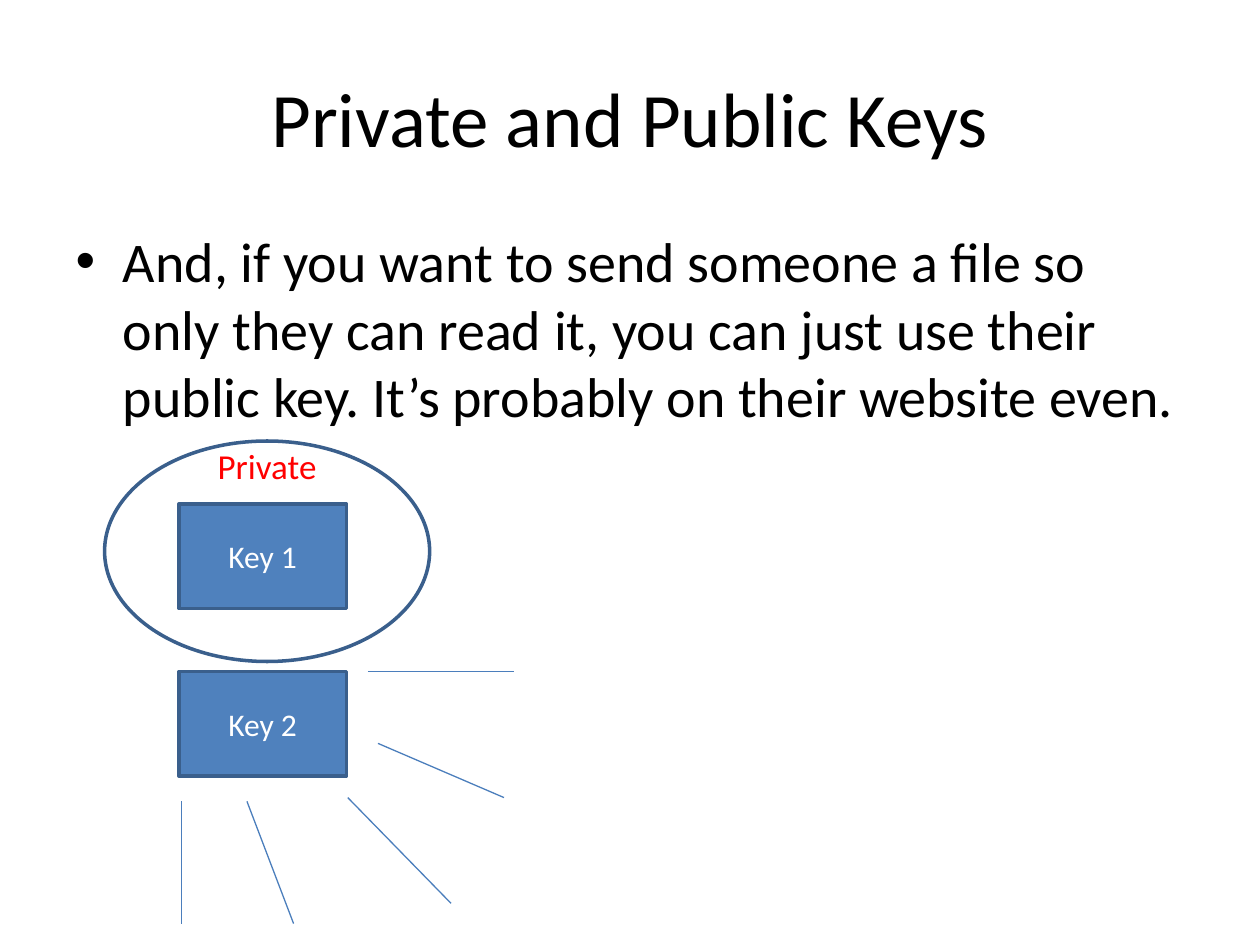
from dataclasses import dataclass

from pptx import Presentation
from pptx.dml.color import RGBColor
from pptx.enum.shapes import MSO_CONNECTOR, MSO_SHAPE
from pptx.enum.text import MSO_ANCHOR, PP_ALIGN
from pptx.oxml.ns import qn
from pptx.util import Inches, Pt

RECTANGLE = MSO_SHAPE.RECTANGLE
OVAL = MSO_SHAPE.OVAL
STRAIGHT = MSO_CONNECTOR.STRAIGHT
MIDDLE = MSO_ANCHOR.MIDDLE
TOP = MSO_ANCHOR.TOP
CENTER = PP_ALIGN.CENTER
LEFT = PP_ALIGN.LEFT

FONT = "Calibri"
BLACK = "000000"
WHITE = "FFFFFF"
RED = "FF0000"
KEY_FILL = "4F81BD"
OUTLINE = "3A5F8C"
RAY_COLOR = "4B7EBC"


@dataclass
class Box:
    left: float
    top: float
    width: float
    height: float

    def lengths(self):
        return [Inches(n) for n in (self.left, self.top, self.width, self.height)]


@dataclass
class Key:
    label: str
    top: float


@dataclass
class Ray:
    start: tuple[float, float]
    end: tuple[float, float]


KEYS = [Key("Key 1", 4), Key("Key 2", 5.33)]
RAYS = [
    Ray((2.92, 5.33), (4.08, 5.33)),
    Ray((2.76, 6.33), (3.58, 7.17)),
    Ray((1.44, 6.36), (1.44, 7.33)),
    Ray((3, 5.9), (4, 6.33)),
    Ray((1.96, 6.36), (2.33, 7.33)),
]


def color(value: str) -> RGBColor:
    return RGBColor.from_string(value)


def write_text(shape, text: str, size: float, font_color: str,
               alignment=CENTER, anchor=MIDDLE):
    frame = shape.text_frame
    frame.text = text
    frame.word_wrap = True
    frame.vertical_anchor = anchor
    paragraph = frame.paragraphs[0]
    paragraph.alignment = alignment
    for run in paragraph.runs:
        run.font.name = FONT
        run.font.size = Pt(size)
        run.font.color.rgb = color(font_color)


def fill_placeholder(shape, box: Box, text: str, size: float, **layout):
    shape.left, shape.top, shape.width, shape.height = box.lengths()
    write_text(shape, text, size, BLACK, **layout)


def add_outlined_shape(slide, kind, box: Box):
    shape = slide.shapes.add_shape(kind, *box.lengths())
    shape.shadow.inherit = False
    shape.fill.background()
    shape.line.color.rgb = color(OUTLINE)
    shape.line.width = Pt(2)
    return shape


def add_key(slide, key: Key):
    shape = add_outlined_shape(slide, RECTANGLE, Box(1.42, key.top, 1.33, 0.83))
    shape.fill.solid()
    shape.fill.fore_color.rgb = color(KEY_FILL)
    write_text(shape, key.label, 18, WHITE)


def add_private_ring(slide):
    ring = Box(0.83, 3.5, 2.58, 1.75)
    add_outlined_shape(slide, OVAL, ring)
    label = Box(ring.left, 3.48, ring.width, 0.44)
    write_text(slide.shapes.add_textbox(*label.lengths()), "Private", 20, RED, anchor=TOP)


def add_ray(slide, ray: Ray):
    points = [Inches(n) for n in ray.start + ray.end]
    connector = slide.shapes.add_connector(STRAIGHT, *points)
    connector.line.color.rgb = color(RAY_COLOR)
    connector.line.width = Pt(0.75)
    properties = connector.element.spPr
    properties.append(properties.makeelement(qn("a:effectLst"), {}))


def main():
    presentation = Presentation()
    presentation.slide_width = Inches(10)
    presentation.slide_height = Inches(7.5)
    slide = presentation.slides.add_slide(presentation.slide_layouts[1])

    title, body = slide.placeholders
    fill_placeholder(title, Box(0.5, 0.3, 9, 1.25), "Private and Public Keys", 44)
    fill_placeholder(
        body,
        Box(0.5, 1.75, 9, 4.95),
        "And, if you want to send someone a file so only they can read it, "
        "you can just use their public key. It’s probably on their website even.",
        32,
        alignment=LEFT,
        anchor=TOP,
    )

    for key in KEYS:
        add_key(slide, key)
    add_private_ring(slide)
    for ray in RAYS:
        add_ray(slide, ray)

    presentation.save("out.pptx")


if __name__ == "__main__":
    main()
